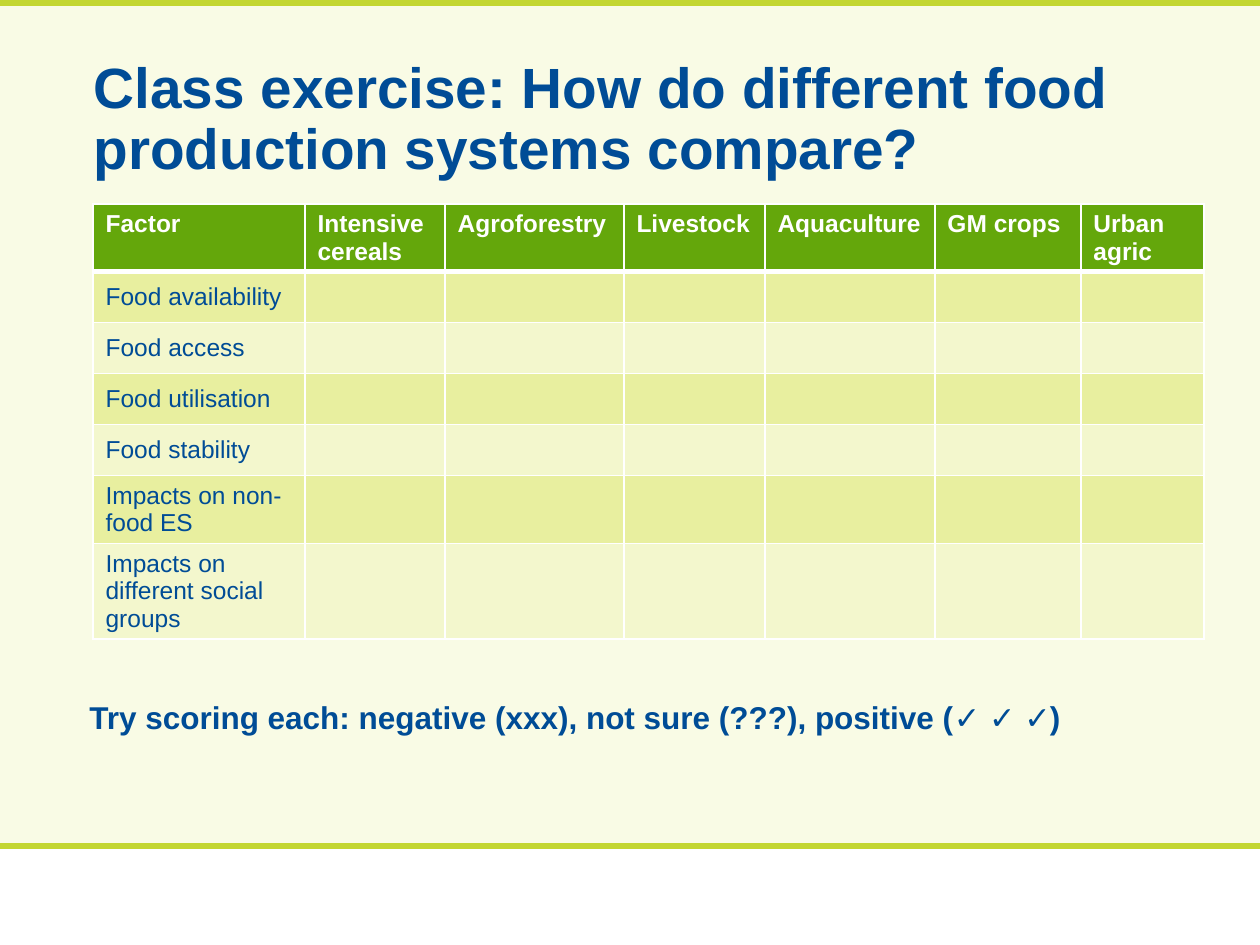
from dataclasses import dataclass

from lxml.etree import SubElement
from pptx import Presentation
from pptx.dml.color import RGBColor
from pptx.enum.shapes import MSO_SHAPE
from pptx.enum.text import MSO_ANCHOR, MSO_AUTO_SIZE, PP_ALIGN
from pptx.oxml import parse_xml
from pptx.oxml.ns import nsdecls, qn
from pptx.util import Emu, Pt


@dataclass(frozen=True)
class Theme:
    font: str = "Arial"
    page: str = "F9FBE5"
    white: str = "FFFFFF"
    bar: str = "C3D631"
    lime: str = "C3D600"
    green: str = "64A70B"
    navy: str = "004C96"
    title: float = 32.4
    note: float = 18
    cell: float = 14


@dataclass(frozen=True)
class Box:
    left: int
    top: int
    width: int
    height: int

    def place(self) -> tuple:
        return tuple(px(n) for n in (self.left, self.top, self.width, self.height))


@dataclass(frozen=True)
class Band:
    box: Box
    fill: str


@dataclass(frozen=True)
class Row:
    label: str
    height: int


THEME = Theme()
BANDS = [
    Band(Box(0, 849, 1260, 96), THEME.white),
    Band(Box(0, 843, 1260, 6), THEME.bar),
    Band(Box(0, 0, 1260, 6), THEME.bar),
]
HEADS = ["Factor", "Intensive cereals", "Agroforestry", "Livestock",
         "Aquaculture", "GM crops", "Urban agric"]
WIDTHS = [212, 140, 179, 141, 170, 146, 123]
HEAD_HIGH = 67
ROWS = [
    Row("Food availability", 51),
    Row("Food access", 51),
    Row("Food utilisation", 51),
    Row("Food stability", 51),
    Row("Impacts on non-food ES", 68),
    Row("Impacts on different social groups", 95),
]


def px(count: int) -> Emu:
    return Emu(round(count * 914400 / 126))


def style(frame, size: float, color: str, bold: bool) -> None:
    for par in frame.paragraphs:
        for font in [par.font] + [run.font for run in par.runs]:
            font.name = THEME.font
            font.size = Pt(size)
            font.bold = bold
            font.color.rgb = RGBColor.from_string(color)


def draw_band(slide, band: Band) -> None:
    shape = slide.shapes.add_shape(MSO_SHAPE.RECTANGLE, *band.box.place())
    shape.shadow.inherit = False
    shape.fill.solid()
    shape.fill.fore_color.rgb = RGBColor.from_string(band.fill)
    shape.line.fill.background()


def paint(cell, color: str, alpha: int) -> None:
    cell.fill.solid()
    cell.fill.fore_color.rgb = RGBColor.from_string(color)
    if alpha < 100:
        tint = cell._tc.tcPr.find(".//" + qn("a:srgbClr"))
        SubElement(tint, qn("a:alpha")).set("val", str(alpha * 1000))


def edge(cell, top: int, base: int) -> None:
    sides = {"L": 1, "R": 1, "T": top, "B": base}
    for spot, (side, width) in enumerate(sides.items()):
        line = parse_xml(
            f'<a:ln{side} {nsdecls("a")} w="{Pt(width)}"><a:solidFill>'
            f'<a:srgbClr val="{THEME.white}"/></a:solidFill></a:ln{side}>')
        cell._tc.tcPr.insert(spot, line)


def draw_grid(slide, left: int, top: int) -> None:
    highs = [HEAD_HIGH] + [row.height for row in ROWS]
    box = Box(left, top, sum(WIDTHS), sum(highs))
    grid = slide.shapes.add_table(len(highs), len(WIDTHS), *box.place()).table
    for col, width in zip(grid.columns, WIDTHS):
        col.width = px(width)
    for line, high in zip(grid.rows, highs):
        line.height = px(high)
    lines = [HEADS] + [[row.label] + [""] * (len(HEADS) - 1) for row in ROWS]
    for r, texts in enumerate(lines):
        head = r == 0
        for c, text in enumerate(texts):
            cell = grid.cell(r, c)
            cell.text_frame.text = text
            style(cell.text_frame, THEME.cell, THEME.white if head else THEME.navy, head)
            cell.vertical_anchor = MSO_ANCHOR.TOP if head else MSO_ANCHOR.MIDDLE
            if head:
                paint(cell, THEME.green, 100)
            else:
                paint(cell, THEME.lime, 30 if r % 2 else 10)
            edge(cell, 3 if r == 1 else 1, 3 if head else 1)


def draw_title(slide, box: Box, text: str) -> None:
    title = slide.shapes.title
    title.left, title.top, title.width, title.height = box.place()
    frame = title.text_frame
    frame.text = text
    frame.word_wrap = True
    frame.auto_size = MSO_AUTO_SIZE.NONE
    frame.vertical_anchor = MSO_ANCHOR.MIDDLE
    frame.paragraphs[0].alignment = PP_ALIGN.LEFT
    frame.paragraphs[0].line_spacing = 0.9
    style(frame, THEME.title, THEME.navy, True)


def draw_note(slide, box: Box, text: str) -> None:
    frame = slide.shapes.add_textbox(*box.place()).text_frame
    frame.text = text
    frame.word_wrap = True
    frame.auto_size = MSO_AUTO_SIZE.SHAPE_TO_FIT_TEXT
    style(frame, THEME.note, THEME.navy, True)


def main() -> None:
    deck = Presentation()
    deck.slide_width, deck.slide_height = px(1260), px(945)
    slide = deck.slides.add_slide(deck.slide_layouts[5])
    slide.background.fill.solid()
    slide.background.fill.fore_color.rgb = RGBColor.from_string(THEME.page)
    for band in BANDS:
        draw_band(slide, band)
    draw_title(slide, Box(81, 29, 1086, 183),
               "Class exercise: How do different food production systems compare?")
    draw_grid(slide, 93, 204)
    draw_note(slide, Box(77, 692, 1123, 50),
              "Try scoring each: negative (xxx), not sure (???), positive (✓ ✓ ✓)")
    deck.save("out.pptx")


if __name__ == "__main__":
    main()
